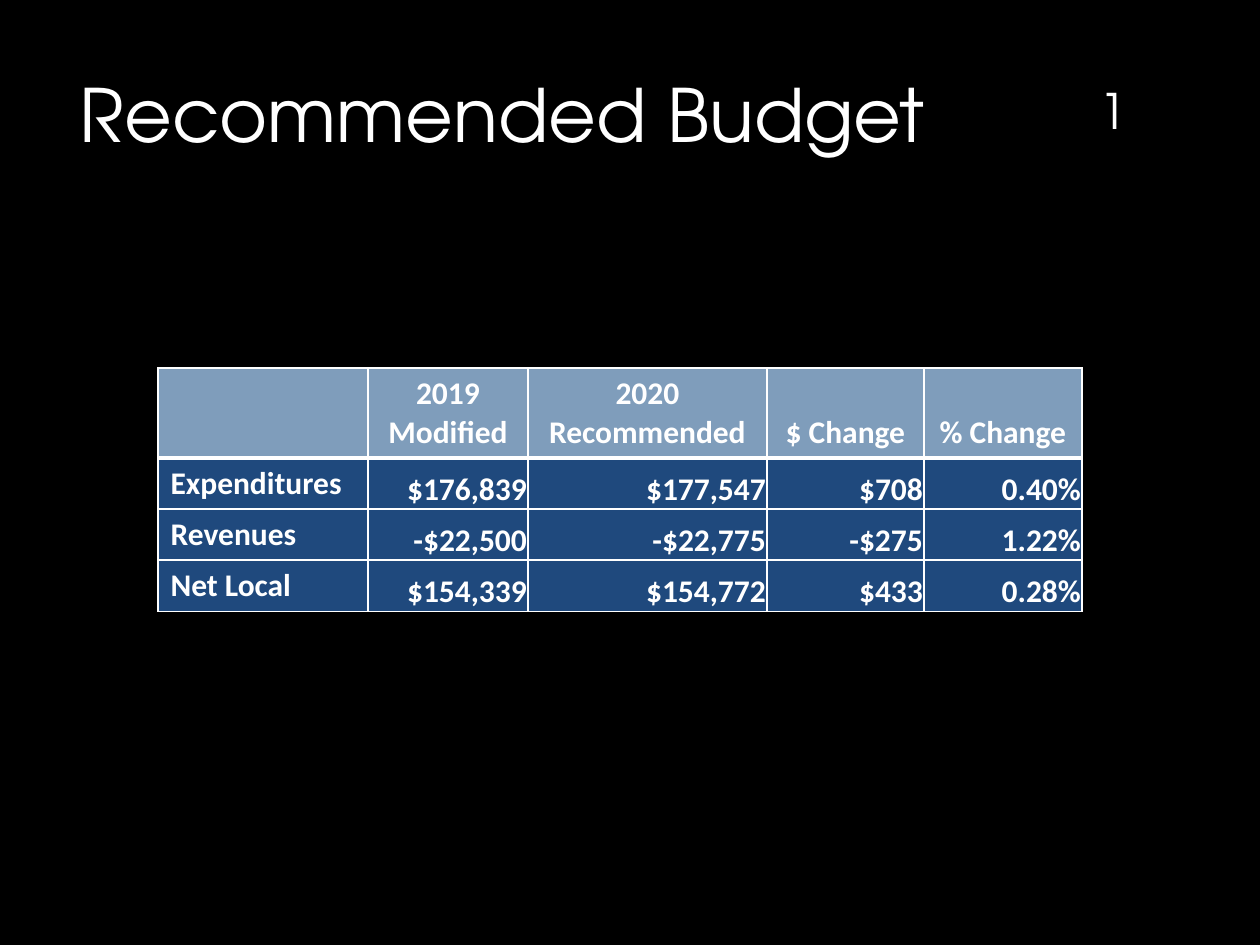
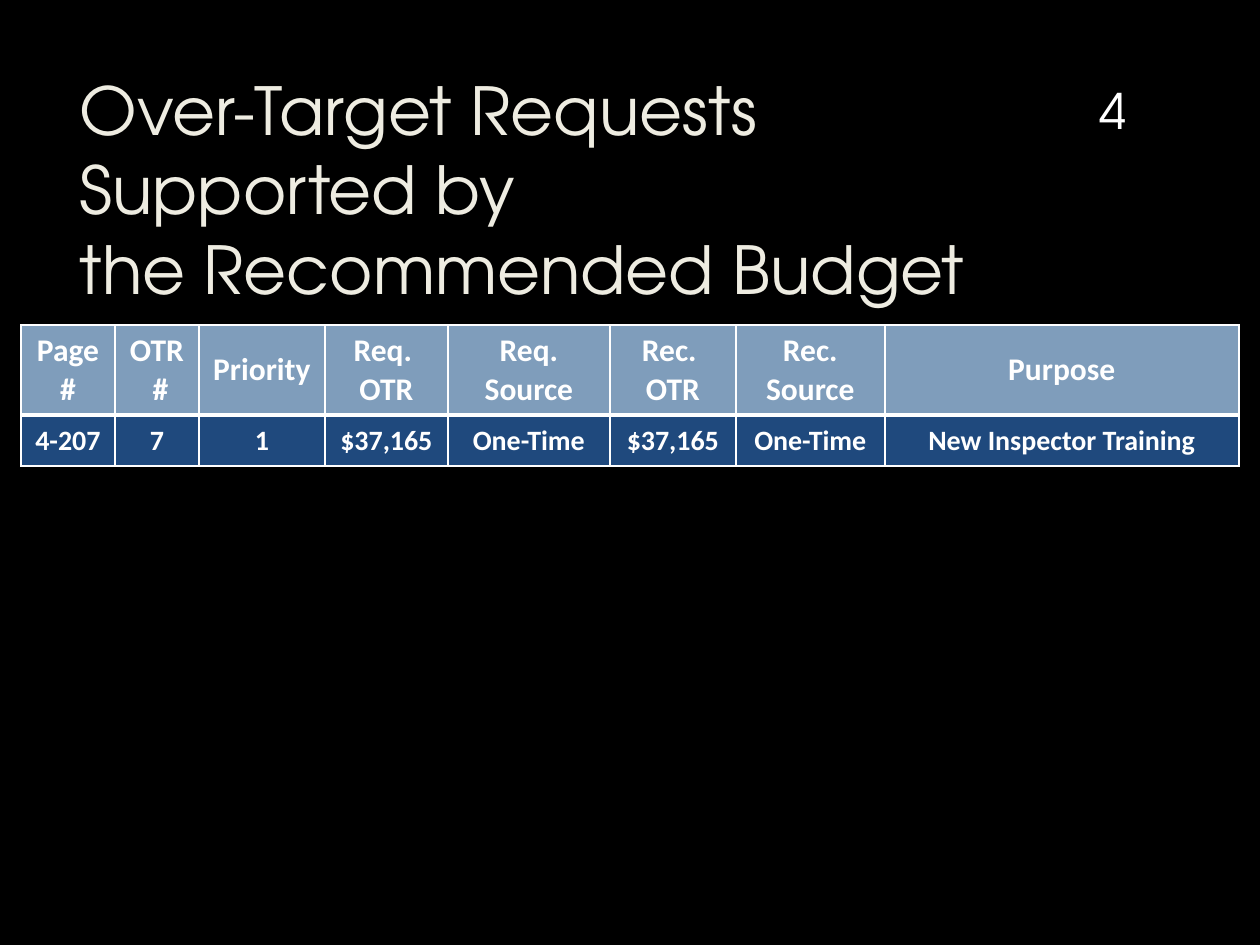
from dataclasses import dataclass

from lxml.etree import SubElement
from pptx import Presentation
from pptx.dml.color import RGBColor as Rgb
from pptx.enum.text import MSO_ANCHOR as Anchor, MSO_AUTO_SIZE as AutoSize, PP_ALIGN as Align
from pptx.oxml.ns import qn
from pptx.util import Emu, Pt

EMU_PER_PX = 914400 / 126
TITLE_ONLY = 5


@dataclass(frozen=True)
class Theme:
    background: str = "000000"
    white: str = "FFFFFF"
    cream: str = "EEECE1"
    header_fill: str = "7F9DBB"
    body_fill: str = "1F497D"
    display_font: str = "TeX Gyre Adventor"
    table_font: str = "Calibri"
    title_size: float = 42
    long_title_size: float = 37.8
    number_size: float = 28
    table_size: float = 18
    small_table_size: float = 16
    thin_line: float = 1
    thick_line: float = 3


def px(length):
    return Emu(round(length * EMU_PER_PX))


def set_all(target, values):
    for name, value in values.items():
        setattr(target, name, value)


def box(left, top, width, height):
    return dict(left=px(left), top=px(top), width=px(width), height=px(height))


class Deck:
    def __init__(self, theme):
        self.theme = theme
        self.presentation = Presentation()
        set_all(self.presentation, dict(slide_width=px(1260), slide_height=px(945)))
        fill = self.presentation.slide_master.background.fill
        fill.solid()
        fill.fore_color.rgb = Rgb.from_string(theme.background)
        self.slide = None

    def add_slide(self):
        layout = self.presentation.slide_layouts[TITLE_ONLY]
        self.slide = self.presentation.slides.add_slide(layout)

    def fill_text(self, frame, text, align, font, size, color, bold=False):
        """Fill a text frame, one paragraph per line of text."""
        frame.text = text
        for paragraph in frame.paragraphs:
            paragraph.alignment = align
            for run in paragraph.runs:
                set_all(run.font, dict(name=font, size=Pt(size), bold=bold))
                run.font.color.rgb = Rgb.from_string(color)

    def title(self, text, size, color):
        shape = self.slide.shapes.title
        set_all(shape, box(67, 63, 973, 193))
        set_all(shape.text_frame, dict(
            word_wrap=True, auto_size=AutoSize.NONE, vertical_anchor=Anchor.TOP))
        self.fill_text(shape.text_frame, text, Align.LEFT, self.theme.display_font, size, color)

    def page_number(self, number):
        shape = self.slide.shapes.add_textbox(**box(1070, 40, 87, 106))
        set_all(shape.text_frame, dict(word_wrap=True, vertical_anchor=Anchor.BOTTOM))
        self.fill_text(shape.text_frame, str(number), Align.CENTER, self.theme.display_font,
                       self.theme.number_size, self.theme.white)

    def borders(self, cell, top, bottom):
        thin = self.theme.thin_line
        properties = cell._tc.get_or_add_tcPr()
        widths = dict(lnL=thin, lnR=thin, lnT=top, lnB=bottom)
        for position, (side, width) in enumerate(widths.items()):
            line = SubElement(properties, qn(f"a:{side}"), w=str(Pt(width)))
            fill = SubElement(line, qn("a:solidFill"))
            SubElement(fill, qn("a:srgbClr"), val=self.theme.white)
            properties.insert(position, line)

    def table(self, left, top, column_widths, rows, cell_format):
        """Draw rows with a header first; cell_format(row, column) gives
        the alignment, the type size and the cell attributes."""
        theme = self.theme
        row_heights = [90] + [51] * (len(rows) - 1)
        frame = self.slide.shapes.add_table(
            len(rows), len(column_widths),
            **box(left, top, sum(column_widths), sum(row_heights)))
        table = frame.table
        set_all(table, dict(first_row=False, horz_banding=False))
        for column, width in zip(table.columns, column_widths):
            column.width = px(width)
        for row_index, (row, height, texts) in enumerate(zip(table.rows, row_heights, rows)):
            row.height = px(height)
            for column_index, text in enumerate(texts):
                cell = row.cells[column_index]
                align, size, attributes = cell_format(row_index, column_index)
                set_all(cell, attributes)
                self.fill_text(cell.text_frame, text, align, theme.table_font, size,
                               theme.white, bold=True)
                cell.fill.solid()
                fill = theme.body_fill if row_index else theme.header_fill
                cell.fill.fore_color.rgb = Rgb.from_string(fill)
                self.borders(cell,
                             top=theme.thick_line if row_index == 1 else theme.thin_line,
                             bottom=theme.thin_line if row_index else theme.thick_line)


def budget_slide(deck):
    theme = deck.theme

    def cell_format(row, column):
        if row == 0:
            return Align.CENTER, theme.table_size, dict(vertical_anchor=Anchor.BOTTOM)
        if column == 0:
            return Align.LEFT, theme.table_size, dict(vertical_anchor=Anchor.TOP)
        return Align.RIGHT, theme.table_size, dict(
            vertical_anchor=Anchor.BOTTOM, margin_left=px(1), margin_top=px(1),
            margin_right=px(1), margin_bottom=0)

    deck.add_slide()
    deck.title("Recommended Budget", theme.title_size, theme.white)
    deck.table(158, 368, [210, 160, 239, 157, 158], [
        ["", "2019\nModified", "2020\nRecommended", "$ Change", "% Change"],
        ["Expenditures", "$176,839", "$177,547", "$708", "0.40%"],
        ["Revenues", "-$22,500", "-$22,775", "-$275", "1.22%"],
        ["Net Local", "$154,339", "$154,772", "$433", "0.28%"],
    ], cell_format)
    deck.page_number(1)


def requests_slide(deck):
    theme = deck.theme

    def cell_format(row, column):
        size = theme.small_table_size if row else theme.table_size
        return Align.CENTER, size, dict(vertical_anchor=Anchor.MIDDLE)

    deck.add_slide()
    deck.title("Over-Target Requests Supported by\nthe Recommended Budget",
               theme.long_title_size, theme.cream)
    deck.page_number(4)
    deck.table(21, 325, [94, 84, 126, 123, 162, 126, 149, 354], [
        ["Page \n#", "OTR\n #", "Priority", "Req. \nOTR", "Req. Source",
         "Rec. \nOTR", "Rec. Source", "Purpose"],
        ["4-207", "7", "1", "$37,165", "One-Time", "$37,165", "One-Time",
         "New Inspector Training"],
    ], cell_format)


def main():
    deck = Deck(Theme())
    budget_slide(deck)
    requests_slide(deck)
    deck.presentation.save("out.pptx")


if __name__ == "__main__":
    main()
